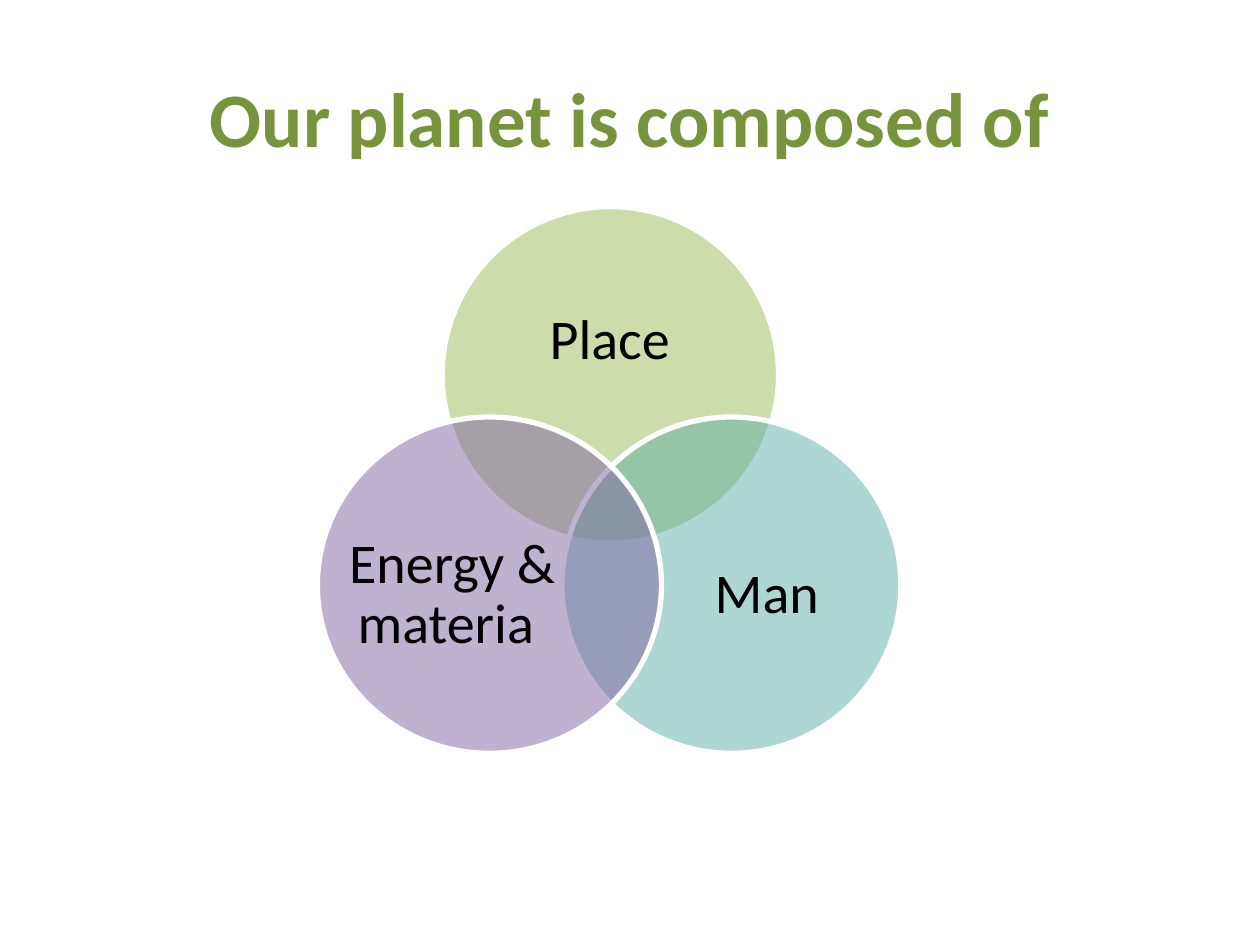
from lxml import etree
from pptx import Presentation
from pptx.dml.color import RGBColor
from pptx.enum.shapes import MSO_SHAPE
from pptx.enum.text import MSO_ANCHOR, PP_ALIGN
from pptx.oxml.ns import qn
from pptx.util import Pt

OVAL = MSO_SHAPE.OVAL
MIDDLE = MSO_ANCHOR.MIDDLE
CENTER = PP_ALIGN.CENTER
FONT = "Calibri"
TITLE_LAYOUT = 5

ELEMENTS = [
    ("Place", "9BBB59", (71.3, 0, 192.2, 192.2), (96.5, 33.8, 141.1, 86.4)),
    ("Man", "5EAFA6", (139.7, 120.2, 193.7, 192.2), (198.8, 169.2, 115.9, 105.8)),
    ("Energy & materia ", "8064A2", (0, 120.2, 196.6, 192.2), (18, 169.2, 118.1, 105.8)),
]


def color(value):
    return RGBColor.from_string(value)


def place_in(box, part):
    left, top = box
    x, y, width, height = part
    return Pt(left + x), Pt(top + y), Pt(width), Pt(height)


def format_text(frame, text, size, font_color, bold=False):
    frame.text = text
    frame.word_wrap = True
    frame.vertical_anchor = MIDDLE
    paragraph = frame.paragraphs[0]
    paragraph.alignment = CENTER
    font = paragraph.runs[0].font
    font.name, font.size, font.bold = FONT, Pt(size), bold
    font.color.rgb = color(font_color)
    return paragraph


def add_title(slide, box):
    title = slide.shapes.title
    title.left, title.top, title.width, title.height = [Pt(v) for v in box]
    format_text(title.text_frame, "Our planet is composed of", 44, "77933C", True)


def add_circle(shapes, position, fill_color):
    circle = shapes.add_shape(OVAL, *position)
    circle.shadow.inherit = False
    circle.fill.solid()
    circle.fill.fore_color.rgb = color(fill_color)
    solid = circle.fill._xPr.find(qn("a:solidFill"))
    etree.SubElement(solid[0], qn("a:alpha"), val="50000")
    circle.line.color.rgb = color("FFFFFF")
    circle.line.width = Pt(3)


def add_label(shapes, position, text):
    frame = shapes.add_textbox(*position).text_frame
    frame.margin_left = frame.margin_right = frame.margin_top = frame.margin_bottom = 0
    paragraph = format_text(frame, text, 32, "000000")
    paragraph.line_spacing = 0.9


def add_venn(slide, box):
    shapes = slide.shapes.add_group_shape().shapes
    for text, fill_color, circle, label in ELEMENTS:
        add_circle(shapes, place_in(box, circle), fill_color)
        add_label(shapes, place_in(box, label), text)


def main():
    deck = Presentation()
    deck.slide_width, deck.slide_height = Pt(720), Pt(540)
    slide = deck.slides.add_slide(deck.slide_layouts[TITLE_LAYOUT])
    add_venn(slide, (181.4, 118.1))
    add_title(slide, (36, 21.6, 648, 90))
    deck.save("out.pptx")


if __name__ == "__main__":
    main()
